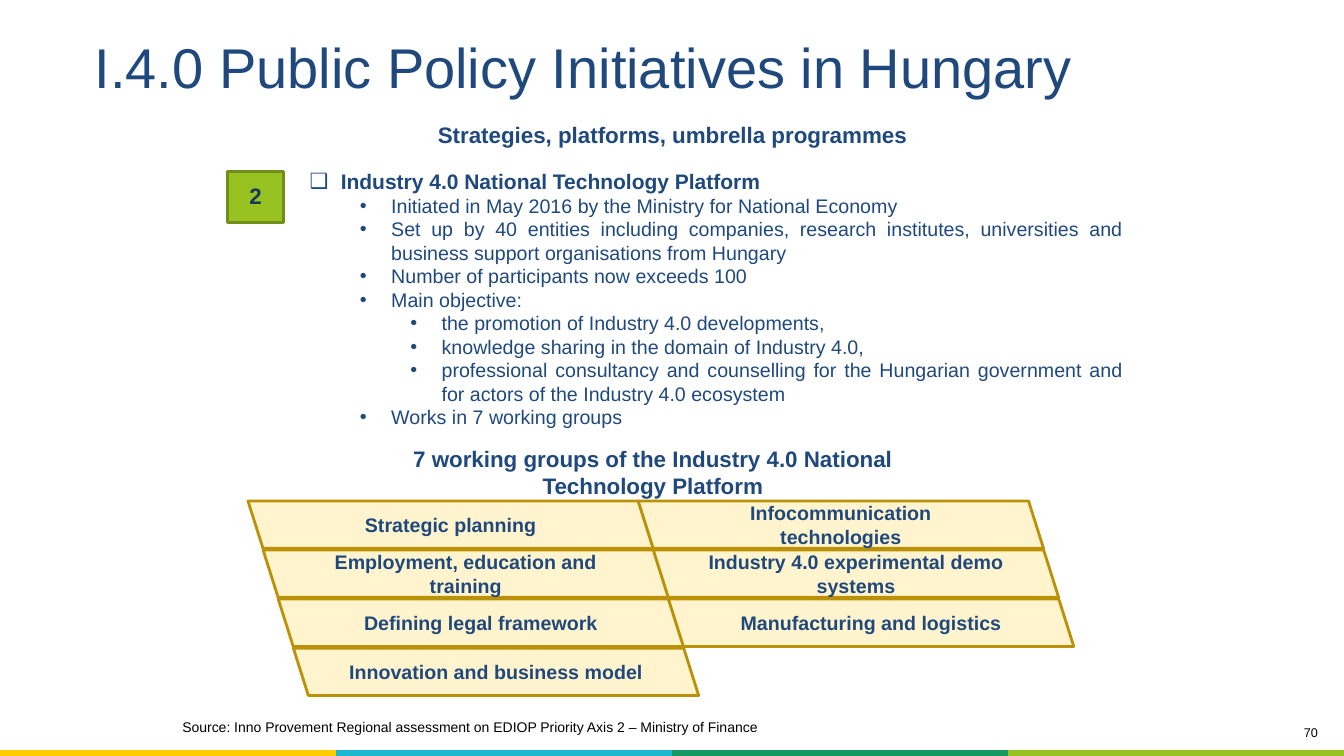
from lxml.etree import SubElement
from pptx import Presentation
from pptx.dml.color import RGBColor
from pptx.enum.shapes import MSO_SHAPE as Shape
from pptx.enum.text import MSO_ANCHOR as Anchor, MSO_AUTO_SIZE as AutoSize, PP_ALIGN as Align
from pptx.oxml.ns import qn
from pptx.util import Inches, Pt

NAVY = RGBColor(0x1F, 0x49, 0x7D)
DARK_NAVY = RGBColor(0x17, 0x37, 0x5E)
BLACK = RGBColor(0x00, 0x00, 0x00)
GREEN = RGBColor(0x98, 0xC2, 0x22)
DARK_GREEN = RGBColor(0x70, 0x90, 0x19)
CREAM = RGBColor(0xFF, 0xF4, 0xCE)
GOLD = RGBColor(0xBB, 0x92, 0x07)
YELLOW = RGBColor(0xFF, 0xCC, 0x00)
CYAN = RGBColor(0x1C, 0xB8, 0xCF)
TEAL = RGBColor(0x15, 0x99, 0x61)

FONT = "Arial"
NO_TABLE_STYLE = "{2D5ABB26-0587-4C30-8999-92F81FD0307C}"

PLATFORM_POINTS = [
    (0, "Industry 4.0 National Technology Platform"),
    (1, "Initiated in May 2016 by the Ministry for National Economy"),
    (1, "Set up by 40 entities including companies, research institutes, "
        "universities and business support organisations from Hungary"),
    (1, "Number of participants now exceeds 100"),
    (1, "Main objective:"),
    (2, "the promotion of Industry 4.0 developments,"),
    (2, "knowledge sharing in the domain of Industry 4.0,"),
    (2, "professional consultancy and counselling for the Hungarian government "
        "and for actors of the Industry 4.0 ecosystem"),
    (1, "Works in 7 working groups"),
]
WORKING_GROUPS = [
    ("Strategic planning", "Infocommunication technologies"),
    ("Employment, education and training", "Industry 4.0 experimental demo systems"),
    ("Defining legal framework", "Manufacturing and logistics"),
    ("Innovation and business model",),
]


def place(shape, box):
    """Move a shape to a box of left, top, width and height in inches."""
    shape.left, shape.top, shape.width, shape.height = map(Inches, box)


def write(para, text, size, color=NAVY, bold=False, align=Align.LEFT):
    """Add one formatted run to a paragraph."""
    para.alignment = align
    span = para.add_run()
    span.text = text
    span.font.name = FONT
    span.font.size = Pt(size)
    span.font.bold = bold
    span.font.color.rgb = color


def add_bullet(para, level, mark):
    """Give a paragraph a hanging bullet for its level."""
    props = para._p.get_or_add_pPr()
    props.set("marL", str(Inches(0.31 + 0.5 * level)))
    props.set("indent", str(-Inches(0.31)))
    color = SubElement(props, qn("a:buClr"))
    SubElement(color, qn("a:srgbClr"), val=str(NAVY))
    SubElement(props, qn("a:buFont"), typeface=FONT)
    SubElement(props, qn("a:buChar"), char=mark)


def add_title(page, box, text):
    """Fill the title placeholder."""
    title = page.shapes.title
    place(title, box)
    frame = title.text_frame
    frame.vertical_anchor = Anchor.MIDDLE
    frame.auto_size = AutoSize.NONE
    write(frame.paragraphs[0], text, 40)


def add_platform_list(page, box, points):
    """Fill the body placeholder with the nested platform points."""
    body = page.placeholders[1]
    place(body, box)
    frame = body.text_frame
    frame.auto_size = AutoSize.NONE
    for index, (level, text) in enumerate(points):
        para = frame.add_paragraph() if index else frame.paragraphs[0]
        para.level = level
        para.space_before = Pt(0)
        add_bullet(para, level, "•" if level else "❑")
        write(para, text, 14 if level else 15, bold=not level, align=Align.JUSTIFY)


def add_label(page, box, text, size, color=NAVY, bold=False, align=Align.LEFT, top=0.05):
    """Add a wrapped one-paragraph text box."""
    label = page.shapes.add_textbox(*map(Inches, box))
    frame = label.text_frame
    frame.word_wrap = True
    frame.margin_top = Inches(top)
    write(frame.paragraphs[0], text, size, color, bold, align)


def add_tile(page, kind, box, text, size, fill, line, color=NAVY):
    """Add an outlined shape with centred bold text."""
    tile = page.shapes.add_shape(kind, *map(Inches, box))
    tile.shadow.inherit = False
    tile.fill.solid()
    tile.fill.fore_color.rgb = fill
    tile.line.color.rgb = line
    tile.line.width = Pt(2)
    frame = tile.text_frame
    frame.word_wrap = True
    frame.vertical_anchor = Anchor.MIDDLE
    write(frame.paragraphs[0], text, size, color, True, Align.CENTER)
    return tile


def add_badge(page, box, text):
    """Add the numbered green square."""
    frame = add_tile(page, Shape.RECTANGLE, box, text, 16, GREEN, DARK_GREEN, DARK_NAVY).text_frame
    frame.margin_left = frame.margin_right = Inches(0.01)
    frame.margin_top = frame.margin_bottom = Inches(0.01)
    frame.paragraphs[0].line_spacing = 0.9


def add_working_groups(page, box, groups):
    """Fill a box with slanted tiles, each row stepping to the right."""
    left, top, width, height = box
    tile_width, tile_height, step = 4.02, 0.47, 0.15
    last = len(groups) - 1
    column_pitch = width - tile_width - step * last
    row_pitch = (height - tile_height) / last
    for row, names in enumerate(groups):
        for column, name in enumerate(names):
            tile_box = (left + column * column_pitch + row * step,
                        top + row * row_pitch, tile_width, tile_height)
            tile = add_tile(page, Shape.PARALLELOGRAM, tile_box, name, 14, CREAM, GOLD)
            tile.adjustments[0] = 0.316
            tile.element.spPr.xfrm.set("flipH", "1")


def add_color_band(page, box, colors):
    """Add the footer band as a one-row table."""
    table = page.shapes.add_table(1, len(colors), *map(Inches, box)).table
    table.first_row = table.horz_banding = False
    table._tbl.tblPr.find(qn("a:tableStyleId")).text = NO_TABLE_STYLE
    for cell, color in zip(table.rows[0].cells, colors):
        cell.fill.solid()
        cell.fill.fore_color.rgb = color


def build_policy_slide(deck):
    """Build the slide about the Hungarian technology platform."""
    page = deck.slides.add_slide(deck.slide_layouts[1])
    add_color_band(page, (0, 7.44, 13.33, 0.17), [YELLOW, CYAN, TEAL, GREEN])
    add_title(page, (0.84, 0.08, 10.08, 1.15), "I.4.0 Public Policy Initiatives in Hungary")
    add_label(page, (2.67, 1.15, 8, 0.59), "Strategies, platforms, umbrella programmes",
              16, bold=True, align=Align.CENTER)
    add_badge(page, (2.26, 1.7, 0.55, 0.51), "2")
    add_platform_list(page, (2.97, 1.62, 8.27, 2.7), PLATFORM_POINTS)
    add_label(page, (3.62, 4.37, 5.71, 0.59),
              "7 working groups of the Industry 4.0 National Technology Platform",
              16, bold=True, align=Align.CENTER)
    add_working_groups(page, (2.46, 4.97, 8.34, 1.93), WORKING_GROUPS)
    add_label(page, (1.71, 7.13, 6.3, 0.24),
              "Source: Inno Provement Regional assessment on EDIOP Priority Axis 2 "
              "– Ministry of Finance", 10, BLACK, top=0)
    add_label(page, (10.55, 7.14, 2.62, 0.31), "70", 9, BLACK, align=Align.RIGHT)


def main():
    """Create the deck and save it."""
    deck = Presentation()
    deck.slide_width, deck.slide_height = Inches(13.33), Inches(7.5)
    build_policy_slide(deck)
    deck.save("out.pptx")


if __name__ == "__main__":
    main()
